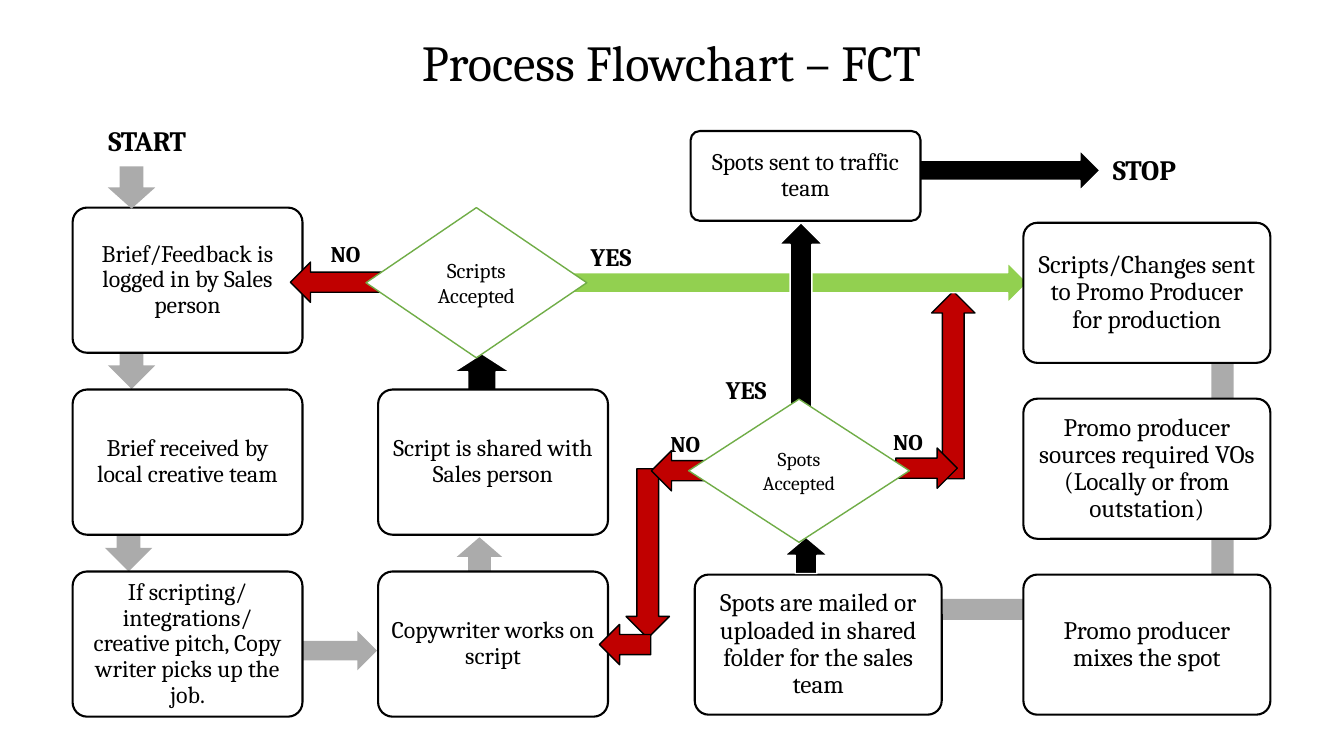
"""Build the FCT process flowchart slide on a grid of tenth-inch cells."""
from pptx import Presentation, util as u
from pptx.dml.color import RGBColor
from pptx.enum import shapes, text

BLACK = RGBColor(0x00, 0x00, 0x00)
WHITE = RGBColor(0xFF, 0xFF, 0xFF)
GRAY = RGBColor(0xAB, 0xAB, 0xAB)
RED = RGBColor(0xC0, 0x00, 0x00)
LIME = RGBColor(0x92, 0xD0, 0x50)
GREEN = RGBColor(0x70, 0xAD, 0x47)
FONT = "Cambria"
KIND = shapes.MSO_SHAPE
ARROWS = {"up": KIND.UP_ARROW, "down": KIND.DOWN_ARROW,
          "left": KIND.LEFT_ARROW, "right": KIND.RIGHT_ARROW}
OUTLINES = {GRAY: None, RED: BLACK, BLACK: WHITE, LIME: WHITE}

BACK_ARROWS = [
    ("up", GRAY, 45.3, 53.3, 4.5, 3.9),
    ("down", GRAY, 10.4, 51.4, 4.7, 5.3),
    ("right", GRAY, 29.7, 62.6, 7.7, 3.9),
    ("up", RED, 92.4, 28.9, 4.3, 18.6),
    ("down", RED, 62.1, 46.5, 4.3, 16.8),
    ("up", BLACK, 45, 35.1, 5.6, 3.6),
    ("right", LIME, 56.65, 26.05, 45.3, 4),
    ("down", GRAY, 10.7, 33.3, 4.7, 5.3),
    ("right", BLACK, 90.7, 14.9, 18.4, 4),
]
FRONT_ARROWS = [
    ("left", RED, 28.8, 26, 9.8, 4),
    ("up", BLACK, 77.8, 53.3, 4.3, 3.6),
    ("right", RED, 88.85, 44.45, 6.1, 4),
    ("left", RED, 64.6, 44.7, 6.8, 4),
    ("left", RED, 59.45, 61.95, 5.1, 4),
    ("up", BLACK, 77.3, 22.1, 4.3, 18.3),
    ("down", GRAY, 10.7, 16.5, 4.7, 4.2),
]
BARS = [(120.15, 25.65, 2.2, 17.3), (120.15, 43.05, 2.2, 17.3),
        (88.7, 59.4, 32.4, 2.1)]
SCRIPT_STEPS = [
    (0, 0, "Brief/Feedback is logged in by Sales person"),
    (0, 1, "Brief received by local creative team"),
    (0, 2, "If scripting/ integrations/ creative pitch, Copy writer picks up the job."),
    (1, 2, "Copywriter works on script"),
    (1, 1, "Script is shared with Sales person"),
]
SPOT_STEPS = [
    (1, 0, "Scripts/Changes sent to Promo Producer for production"),
    (1, 1, "Promo producer sources required VOs (Locally or from outstation)"),
    (1, 2, "Promo producer mixes the spot"),
    (0, 2, "Spots are mailed or uploaded in shared folder for the sales team"),
]
LABELS = [
    ("NO", 16, False, 31.8, 23.3, 6.1, 3.3),
    ("YES", 18, False, 57.6, 23.4, 8.1, 3.6),
    ("NO", 16, False, 65.5, 42.2, 6.1, 3.3),
    ("YES", 18, False, 71, 36.6, 8.1, 3.6),
    ("NO", 16, False, 87.6, 42, 6.1, 3.3),
    ("START", 20, True, 7.2, 11.8, 14.8, 4.4),
    ("STOP", 20, True, 106.3, 14.6, 14.4, 4.4),
]


def cells(*counts):
    """Turn counts of grid cells into lengths."""
    return [u.Inches(n / 10) for n in counts]


def write(sp, words, size=18, bold=False, centred=True, middle=True, spacing=None, inset=None):
    """Put formatted text into a shape."""
    tf = sp.text_frame
    tf.word_wrap = True
    tf.vertical_anchor = text.MSO_ANCHOR.MIDDLE if middle else text.MSO_ANCHOR.TOP
    if inset is not None:
        tf.margin_left = tf.margin_right = tf.margin_top = tf.margin_bottom = u.Inches(inset)
    p = tf.paragraphs[0]
    p.alignment = text.PP_ALIGN.CENTER if centred else text.PP_ALIGN.LEFT
    p.line_spacing = spacing
    r = p.add_run()
    r.text = words
    r.font.name, r.font.size, r.font.bold = FONT, u.Pt(size), bold
    r.font.color.rgb = BLACK


def shape(s, kind, box, fill=WHITE, line=None, width=1):
    """Add a flat preset shape."""
    sp = s.shapes.add_shape(kind, *cells(*box))
    sp.shadow.inherit = False
    sp.fill.solid()
    sp.fill.fore_color.rgb = fill
    if line is None:
        sp.line.fill.background()
    else:
        sp.line.color.rgb = line
        sp.line.width = u.Pt(width)
    return sp


def arrow(s, direction, fill, *box):
    """Add a block arrow outlined to suit its colour."""
    shape(s, ARROWS[direction], box, fill, OUTLINES[fill])


def step(s, words, size, inset, *box):
    """Add a rounded process box."""
    sp = shape(s, KIND.ROUNDED_RECTANGLE, box, line=BLACK, width=1.5)
    sp.adjustments[0] = 0.1
    write(sp, words, size, spacing=0.9, inset=inset)


def decision(s, words, size, *box):
    """Add a decision diamond."""
    write(shape(s, KIND.FLOWCHART_DECISION, box, line=GREEN), words, size)


def label(s, words, box, **fmt):
    """Add a free text label."""
    write(s.shapes.add_textbox(*cells(*box)), words, **fmt)


def main():
    """Draw the flowchart and save it."""
    prs = Presentation()
    prs.slide_width, prs.slide_height = u.Inches(13.33), u.Inches(7.5)
    s = prs.slides.add_slide(prs.slide_layouts[6])
    label(s, "Process Flowchart – FCT", (10, 2.4, 113.2, 8.2), size=36, spacing=0.9)
    for item in BACK_ARROWS:
        arrow(s, *item)
    for box in BARS:
        shape(s, KIND.RECTANGLE, box, GRAY)
    for col, row, words in SCRIPT_STEPS:
        step(s, words, 17, 0.07, 7.2 + 30.3 * col, 20.6 + 18.05 * row, 22.8, 14.4)
    for col, row, words in SPOT_STEPS:
        step(s, words, 18, 0.08, 68.9 + 32.6 * col, 22.1 + 17.45 * row, 24.5, 13.9)
    step(s, "Spots sent to traffic team", 17, 0.07, 68.5, 13, 22.8, 8.9)
    for item in FRONT_ARROWS:
        arrow(s, *item)
    decision(s, "Scripts Accepted", 15, 36.3, 20.6, 21.9, 14.9)
    decision(s, "Spots Accepted", 14, 68.3, 39.6, 21.9, 14.2)
    for words, size, centred, *box in LABELS:
        label(s, words, box, size=size, bold=True, centred=centred, middle=False)
    prs.save("out.pptx")


if __name__ == "__main__":
    main()
